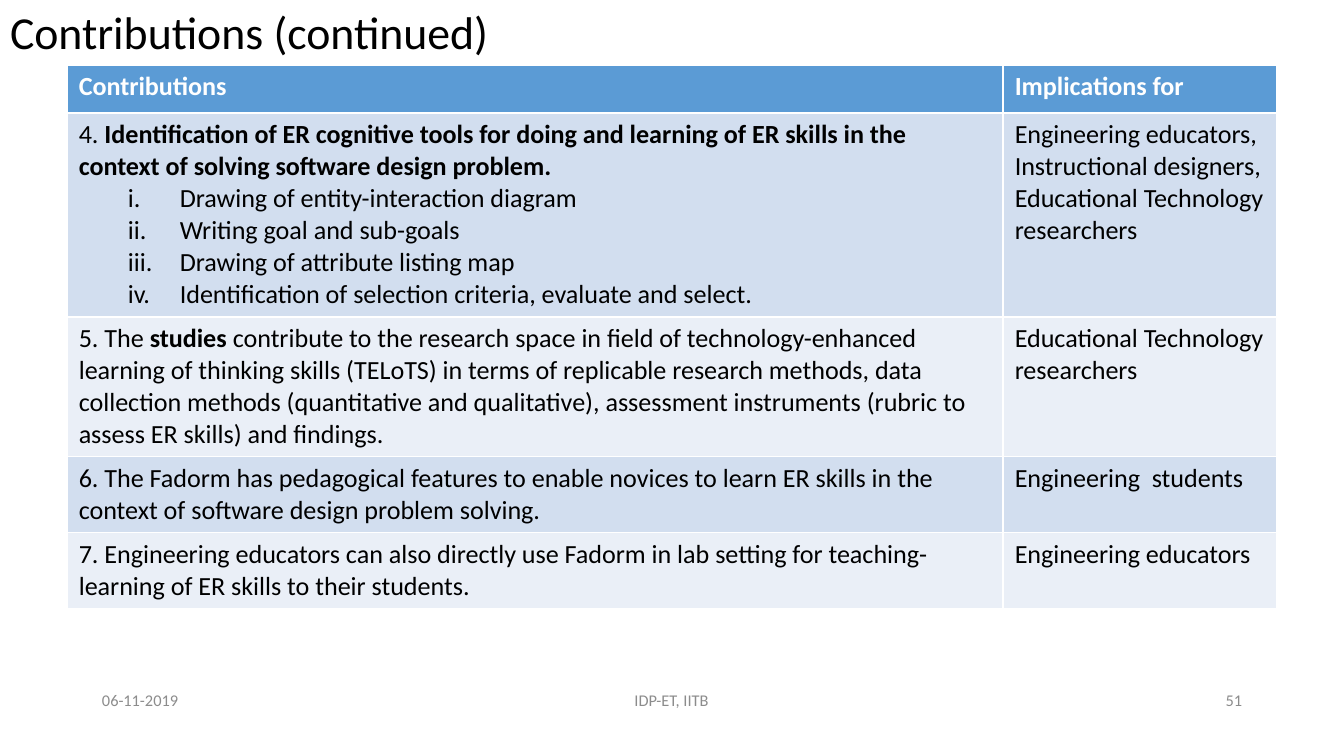
import pptx
import pptx.dml.color
import pptx.enum.text
import pptx.oxml.ns
import pptx.util
import lxml.etree

ALIGN = pptx.enum.text.PP_ALIGN
MIDDLE = pptx.enum.text.MSO_ANCHOR.MIDDLE
PX = 7769  # EMU in one px
SLIDE_SIZE = (1344, 736)
FONT = "Calibri"
BLACK, WHITE, GREY = "000000", "FFFFFF", "8C8C8C"
HEADER_FILL, BAND_FILLS = "5B9BD5", ("D2DEEF", "EAEFF7")

TITLE = "Contributions (continued)"
TITLE_BOX = (1, -36, 1159, 142)

# A cell is a list of paragraphs, a paragraph a list of (text, bold) runs.
HEADER = [[[("Contributions", True)]], [[("Implications for", True)]]]
TOOLS = [
    "Drawing of entity-interaction diagram",
    "Writing goal and sub-goals",
    "Drawing of attribute listing map",
    "Identification of selection criteria, evaluate and select.",
]
ROWS = [
    HEADER,
    [
        [[("4. ", False),
          ("Identification of ER cognitive tools for doing and learning of ER skills in the "
           "context of solving software design problem.", True)]]
        + [[(tool, False)] for tool in TOOLS],
        [[("Engineering educators, Instructional designers,", False)],
         [("Educational Technology researchers", False)]],
    ],
    [
        [[("5. The ", False), ("studies", True),
          (" contribute to the research space in field of technology-enhanced learning of "
           "thinking skills (TELoTS) in terms of replicable research methods, data collection "
           "methods (quantitative and qualitative), assessment instruments (rubric to assess "
           "ER skills) and findings.", False)]],
        [[("Educational Technology researchers", False)]],
    ],
    [
        [[("6. The Fadorm has pedagogical features to enable novices to learn ER skills in the "
           "context of software design problem solving.", False)]],
        [[("Engineering  students", False)]],
    ],
    [
        [[("7. Engineering educators can also directly use Fadorm in lab setting for "
           "teaching-learning of ER skills to their students.", False)]],
        [[("Engineering educators", False)]],
    ],
]
TABLE_LEFT, TABLE_TOP = 67, 65
COLUMN_WIDTHS = (936, 274)
ROW_HEIGHTS = (48, 204, 139, 76, 76)
LIST_INDENT, LIST_HANGING = 101, 52

FOOTER_TOP, FOOTER_HEIGHT = 681, 39
FOOTERS = [  # text, left, width, alignment
    ("06-11-2019", 93, 302, ALIGN.LEFT),
    ("IDP-ET, IITB", 445, 453, ALIGN.CENTER),
    ("51", 949, 302, ALIGN.RIGHT),
]


def color(hex_string):
    return pptx.dml.color.RGBColor.from_string(hex_string)


def emu(*lengths):
    return [pptx.util.Emu(length * PX) for length in lengths]


def set_attributes(target, values):
    for name, value in values.items():
        setattr(target, name, value)


def add_run(paragraph, text, size, text_color, bold=False):
    run = paragraph.add_run()
    run.text = text
    set_attributes(run.font, {"name": FONT, "size": pptx.util.Pt(size), "bold": bold})
    run.font.color.rgb = color(text_color)


def format_frame(frame):
    side, edge = emu(9, 5)
    set_attributes(frame, {
        "word_wrap": True, "vertical_anchor": MIDDLE,
        "auto_size": pptx.enum.text.MSO_AUTO_SIZE.NONE,
        "margin_left": side, "margin_right": side,
        "margin_top": edge, "margin_bottom": edge,
    })


def number_paragraph(paragraph):
    """Make the paragraph an item of an indented list with lower-case Roman numerals."""
    paragraph.level = 1
    properties = paragraph._p.get_or_add_pPr()
    properties.set("marL", str(LIST_INDENT * PX))
    properties.set("indent", str(-LIST_HANGING * PX))
    numbering = lxml.etree.SubElement(properties, pptx.oxml.ns.qn("a:buAutoNum"))
    numbering.set("type", "romanLcPeriod")


def fill_cell(cell, paragraphs, fill, text_color):
    cell.fill.solid()
    cell.fill.fore_color.rgb = color(fill)
    for index, runs in enumerate(paragraphs):
        frame = cell.text_frame
        paragraph = frame.add_paragraph() if index else frame.paragraphs[0]
        if runs[0][0] in TOOLS:
            number_paragraph(paragraph)
        for text, bold in runs:
            add_run(paragraph, text, 16, text_color, bold)


def add_title(slide):
    title = slide.shapes.title
    left, top, width, height = emu(*TITLE_BOX)
    set_attributes(title, {"left": left, "top": top, "width": width, "height": height})
    format_frame(title.text_frame)
    paragraph = title.text_frame.paragraphs[0]
    set_attributes(paragraph, {"alignment": ALIGN.LEFT, "line_spacing": 0.9})
    add_run(paragraph, TITLE, 28, BLACK)


def add_contributions(slide):
    box = emu(TABLE_LEFT, TABLE_TOP, sum(COLUMN_WIDTHS), sum(ROW_HEIGHTS))
    table = slide.shapes.add_table(len(ROWS), len(COLUMN_WIDTHS), *box).table
    for column, width in zip(table.columns, emu(*COLUMN_WIDTHS)):
        column.width = width
    for row, height in zip(table.rows, emu(*ROW_HEIGHTS)):
        row.height = height
    for row_index, cells in enumerate(ROWS):
        is_header = row_index == 0
        fill = HEADER_FILL if is_header else BAND_FILLS[(row_index - 1) % 2]
        for column_index, paragraphs in enumerate(cells):
            cell = table.cell(row_index, column_index)
            fill_cell(cell, paragraphs, fill, WHITE if is_header else BLACK)


def add_footers(slide):
    for text, left, width, alignment in FOOTERS:
        box = slide.shapes.add_textbox(*emu(left, FOOTER_TOP, width, FOOTER_HEIGHT))
        format_frame(box.text_frame)
        paragraph = box.text_frame.paragraphs[0]
        paragraph.alignment = alignment
        add_run(paragraph, text, 10, GREY)


def main():
    presentation = pptx.Presentation()
    presentation.slide_width, presentation.slide_height = emu(*SLIDE_SIZE)
    slide = presentation.slides.add_slide(presentation.slide_layouts[5])
    add_title(slide)
    add_contributions(slide)
    add_footers(slide)
    presentation.save("out.pptx")


if __name__ == "__main__":
    main()
